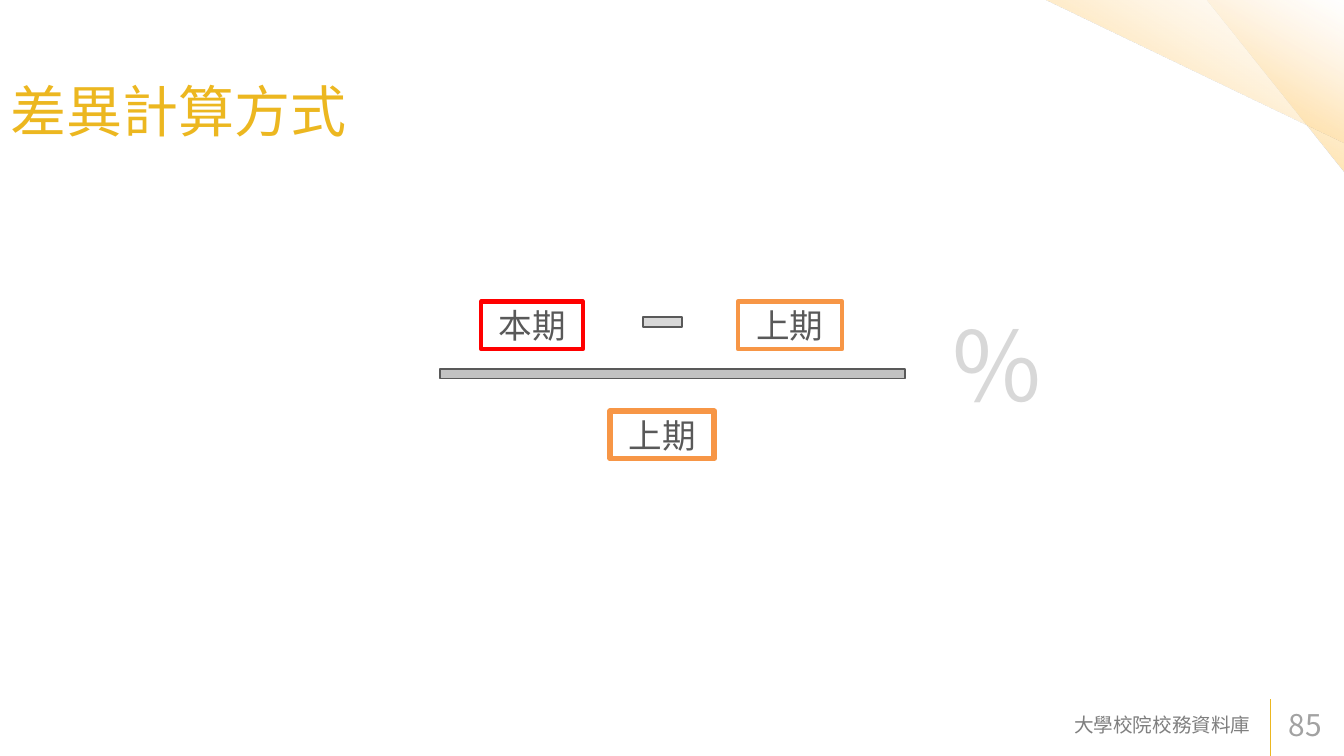
from dataclasses import dataclass

from lxml import etree
from pptx import Presentation, util as u
from pptx.dml.color import RGBColor
from pptx.enum import shapes, text
from pptx.oxml import ns

FONT = "Noto Sans CJK TC"
GOLD = "ECB720"
DARK_GREY = "595959"
GRADIENT = ((0, "FFD984", 100), (50, "FFD995", 43), (100, "FFF0DA", 0))


@dataclass(frozen=True)
class Area:
    left: float
    top: float
    width: float
    height: float

    def lengths(self) -> tuple:
        return tuple(u.Cm(n) for n in (self.left, self.top, self.width, self.height))


@dataclass(frozen=True)
class Label:
    words: str
    area: Area
    size: float
    color: str
    align: text.PP_ALIGN = text.PP_ALIGN.LEFT
    anchor: text.MSO_ANCHOR = text.MSO_ANCHOR.MIDDLE
    margins: tuple[float, float] = (0.46, 0.23)


@dataclass(frozen=True)
class Term:
    words: str
    area: Area
    border: str
    weight: float


@dataclass(frozen=True)
class Bar:
    area: Area
    fill: str


def rgb(value: str) -> RGBColor:
    return RGBColor.from_string(value)


def write(shape, label: Label) -> None:
    frame = shape.text_frame
    frame.word_wrap = True
    frame.vertical_anchor = label.anchor
    frame.margin_left = frame.margin_right = u.Cm(label.margins[0])
    frame.margin_top = frame.margin_bottom = u.Cm(label.margins[1])
    paragraph = frame.paragraphs[0]
    paragraph.text = label.words
    paragraph.alignment = label.align
    paragraph.font.size = u.Pt(label.size)
    paragraph.font.name = FONT
    paragraph.font.color.rgb = rgb(label.color)
    properties = paragraph._p.pPr.find(ns.qn("a:defRPr"))
    etree.SubElement(properties, ns.qn("a:ea"), typeface=FONT)


def add_label(slide, label: Label) -> None:
    write(slide.shapes.add_textbox(*label.area.lengths()), label)


def add_block(slide, kind, area: Area, fill: str, border: str, weight: float):
    shape = slide.shapes.add_shape(kind, *area.lengths())
    shape.shadow.inherit = False
    shape.fill.solid()
    shape.fill.fore_color.rgb = rgb(fill)
    shape.line.color.rgb = rgb(border)
    shape.line.width = u.Pt(weight)
    return shape


def add_term(slide, term: Term) -> None:
    shape = add_block(slide, shapes.MSO_SHAPE.RECTANGLE, term.area, "FFFFFF", term.border, term.weight)
    write(shape, Label(term.words, term.area, 36, DARK_GREY, text.PP_ALIGN.CENTER,
                       text.MSO_ANCHOR.TOP, (0.25, 0.13)))


def add_bar(slide, bar: Bar) -> None:
    shape = add_block(slide, shapes.MSO_SHAPE.MATH_MINUS, bar.area, bar.fill, DARK_GREY, 2)
    shape.adjustments[0] = 0.235


def add_corner(slide, area: Area) -> None:
    shape = slide.shapes.add_shape(shapes.MSO_SHAPE.RIGHT_TRIANGLE, *area.lengths())
    shape.rotation = 180
    shape.shadow.inherit = False
    shape.line.fill.background()
    gradient = etree.Element(ns.qn("a:gradFill"), rotWithShape="1")
    stops = etree.SubElement(gradient, ns.qn("a:gsLst"))
    for position, color, opacity in GRADIENT:
        stop = etree.SubElement(stops, ns.qn("a:gs"), pos=str(position * 1000))
        tint = etree.SubElement(stop, ns.qn("a:srgbClr"), val=color)
        etree.SubElement(tint, ns.qn("a:alpha"), val=str(opacity * 1000))
    etree.SubElement(gradient, ns.qn("a:lin"), ang=str(120 * 60000), scaled="0")
    shape._element.spPr.find(ns.qn("a:prstGeom")).addnext(gradient)


def add_divider(slide, x: float, bottom: float, top: float) -> None:
    line = slide.shapes.add_connector(
        shapes.MSO_CONNECTOR.STRAIGHT, u.Cm(x), u.Cm(bottom), u.Cm(x), u.Cm(top))
    line.line.color.rgb = rgb(GOLD)
    line.line.width = u.Pt(1)
    etree.SubElement(line._element.spPr, ns.qn("a:effectLst"))


CORNERS = (Area(45.62, 0, 5.18, 6.53), Area(39.47, 0, 11.38, 5.41))
LABELS = (
    Label("差異計算方式", Area(0, 0, 17.55, 8.33), 60, GOLD, margins=(0.38, 0.18)),
    Label("大學校院校務資料庫", Area(26.14, 26.64, 21.59, 1.52), 21, "7F7F7F", text.PP_ALIGN.RIGHT),
    Label("85", Area(48.26, 26.64, 2.51, 1.52), 32, "A2A2A2"),
    Label("%", Area(35.76, 11.4, 5.92, 4.67), 103.5, "D8D8D8",
          anchor=text.MSO_ANCHOR.TOP, margins=(0.25, 0.13)),
)
TERMS = (
    Term("本期", Area(18.19, 11.4, 3.84, 1.8), "FF0000", 4.5),
    Term("上期", Area(27.89, 11.4, 3.94, 1.8), "F79646", 4.5),
    Term("上期", Area(23.06, 15.54, 3.94, 1.8), "F79646", 6),
)
BARS = (
    Bar(Area(24.03, 11.4, 2.01, 1.57), "D8D8D8"),
    Bar(Area(13.46, 13.34, 23.93, 1.57), "C2C2C2"),
)


def main() -> None:
    presentation = Presentation()
    presentation.slide_width = u.Cm(50.8)
    presentation.slide_height = u.Cm(28.58)
    slide = presentation.slides.add_slide(presentation.slide_layouts[6])
    add_divider(slide, 48.03, 28.58, 26.42)
    for corner in CORNERS:
        add_corner(slide, corner)
    for label in LABELS:
        add_label(slide, label)
    for term in TERMS:
        add_term(slide, term)
    for bar in BARS:
        add_bar(slide, bar)
    presentation.save("out.pptx")


if __name__ == "__main__":
    main()
